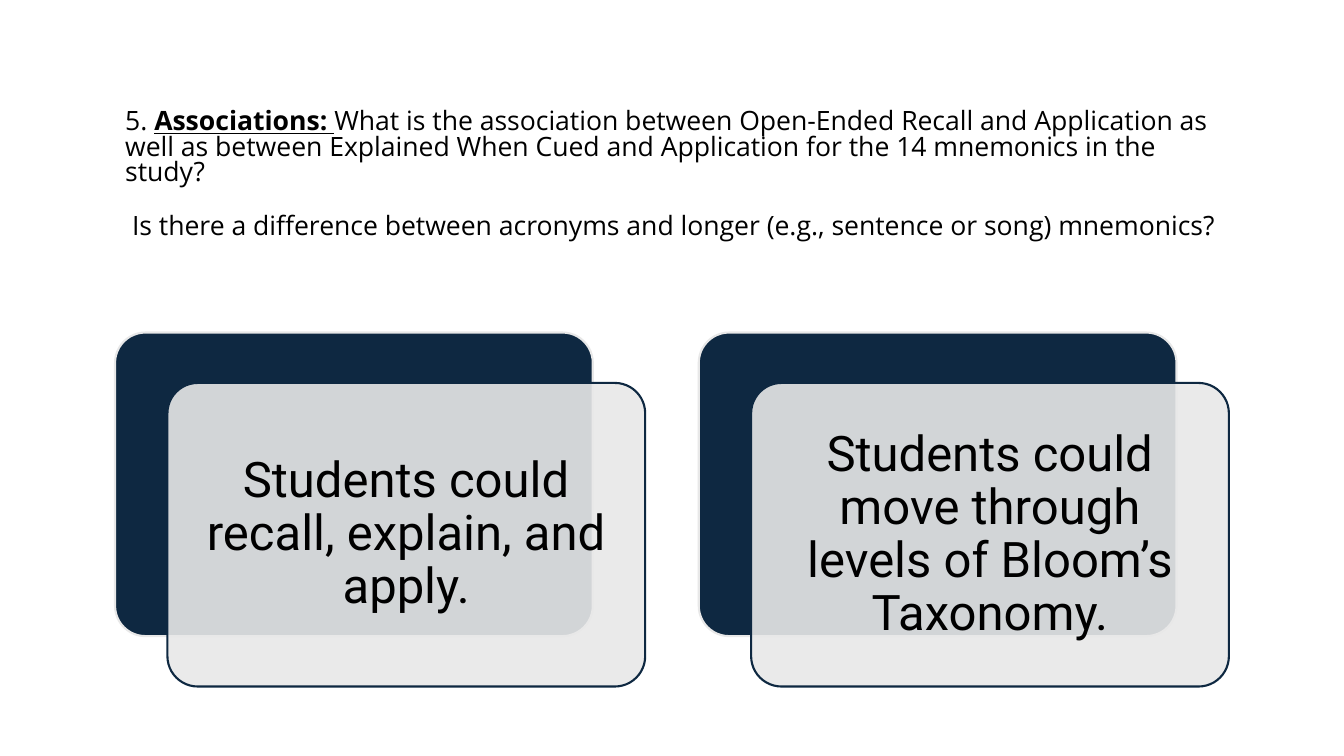
from lxml import etree
from pptx import Presentation
from pptx.dml.color import RGBColor
from pptx.enum import shapes, text
from pptx.oxml import ns
from pptx.util import Cm, Pt

NAVY = RGBColor(0x0E, 0x28, 0x41)
GREY = RGBColor(0xE8, 0xE8, 0xE8)
BLACK = RGBColor(0, 0, 0)

deck = Presentation()
deck.slide_width, deck.slide_height = Cm(33.87), Cm(19.05)
page = deck.slides.add_slide(deck.slide_layouts[5])

# Research question in the title
title = page.shapes.title
title.left, title.top, title.width, title.height = Cm(2.9), Cm(2.26), Cm(28.27), Cm(4.32)
frame = title.text_frame
frame.word_wrap = True
frame.auto_size = text.MSO_AUTO_SIZE.NONE
frame.vertical_anchor = text.MSO_ANCHOR.MIDDLE
question = frame.paragraphs[0]
for words, strong in [
    ("5. ", False),
    ("Associations: ", True),
    ("What is the association between Open-Ended Recall and Application as well as "
     "between Explained When Cued and Application for the 14 mnemonics in the study?", False),
]:
    span = question.add_run()
    span.text = words
    span.font.bold = span.font.underline = strong
question.space_after = Pt(20.4)
follow_up = frame.add_paragraph()
follow_up.text = (" Is there a difference between acronyms and longer "
                  "(e.g., sentence or song) mnemonics?")
for para in frame.paragraphs:
    para.alignment = text.PP_ALIGN.LEFT
    para.line_spacing = 0.79
    para.font.name = "Open Sans"
    para.font.size = Pt(19)
    para.font.color.rgb = BLACK


def add_panel(left, top, fill, line):
    panel = page.shapes.add_shape(shapes.MSO_SHAPE.ROUNDED_RECTANGLE,
                                  left, top, Cm(12.04), Cm(7.65))
    panel.adjustments[0] = 0.1
    panel.shadow.inherit = False
    panel.fill.solid()
    panel.fill.fore_color.rgb = fill
    panel.line.color.rgb = line
    panel.line.width = Pt(1.5)
    return panel


# Findings: a navy panel behind a translucent card
findings = ["Students could recall, explain, and apply.",
            "Students could move through levels of Bloom’s Taxonomy."]
for index, finding in enumerate(findings):
    left, top = Cm(2.9 + 14.71 * index), Cm(8.38)
    add_panel(left, top, NAVY, GREY)
    card = add_panel(left + Cm(1.32), top + Cm(1.27), GREY, NAVY)
    colour = card.fill._xPr.find(".//" + ns.qn("a:srgbClr"))
    etree.SubElement(colour, ns.qn("a:alpha"), val="90000")

    frame = card.text_frame
    frame.word_wrap = True
    frame.vertical_anchor = text.MSO_ANCHOR.MIDDLE
    frame.margin_left = frame.margin_right = Cm(0.38)
    frame.margin_top = frame.margin_bottom = Cm(0.38)
    para = frame.paragraphs[0]
    para.text = finding
    para.alignment = text.PP_ALIGN.CENTER
    para.line_spacing = 0.9
    para.font.name = "Roboto"
    para.font.size = Pt(35)
    para.font.color.rgb = BLACK

deck.save("out.pptx")
